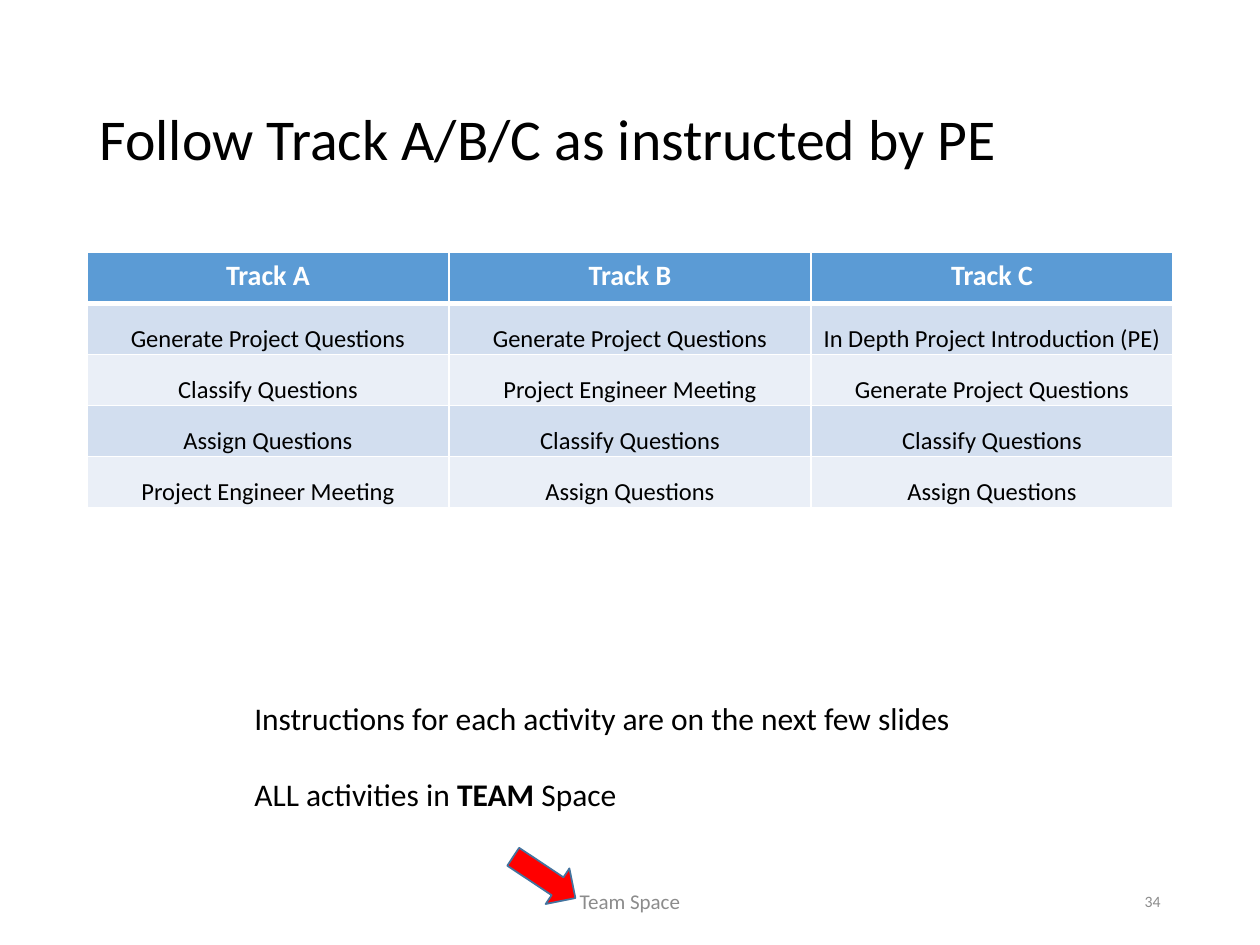
from lxml.etree import SubElement
from pptx import Presentation
from pptx.dml.color import RGBColor
from pptx.enum.shapes import MSO_SHAPE
from pptx.enum.text import MSO_ANCHOR, MSO_AUTO_SIZE, PP_ALIGN
from pptx.oxml.ns import qn
from pptx.util import Inches, Pt

FONT = "Calibri"
BLACK, WHITE, GRAY = "000000", "FFFFFF", "8C8C8C"
HEADER, BANDS = "5B9BD5", ("D2DEEF", "EAEFF7")
MARGIN, CONTENT = 0.069, 0.862  # shares of the slide width

TRACKS = [
    ("Track A", "Track B", "Track C"),
    ("Generate Project Questions", "Generate Project Questions",
     "In Depth Project Introduction (PE)"),
    ("Classify Questions", "Project Engineer Meeting", "Generate Project Questions"),
    ("Assign Questions", "Classify Questions", "Classify Questions"),
    ("Project Engineer Meeting", "Assign Questions", "Assign Questions"),
]


def color(value):
    return RGBColor.from_string(value)


class SlideBuilder:
    """Holds the deck, the current slide and the shared style."""

    def __init__(self, width, height):
        self.deck = Presentation()
        self.deck.slide_width, self.deck.slide_height = Inches(width), Inches(height)
        self.slide = self.deck.slides.add_slide(self.deck.slide_layouts[5])

    def area(self, left, top, width, height):
        """Turn shares of the slide into lengths."""
        across, down = self.deck.slide_width, self.deck.slide_height
        return (round(left * across), round(top * down),
                round(width * across), round(height * down))

    def fill_text(self, frame, paragraphs, size, ink=BLACK, align=PP_ALIGN.LEFT,
                  gap=0, bold=False):
        """Each paragraph is a list of texts; every second text is bold."""
        for index, texts in enumerate(paragraphs):
            para = frame.add_paragraph() if index else frame.paragraphs[0]
            para.alignment = align
            para.space_before = Pt(gap if index else 0)
            for number, text in enumerate(texts):
                span = para.add_run()
                span.text = text
                span.font.name, span.font.size = FONT, Pt(size)
                span.font.bold = bold or number % 2 == 1
                span.font.color.rgb = color(ink)

    def title(self, text, area, size):
        box = self.slide.shapes.title
        box.left, box.top, box.width, box.height = self.area(*area)
        frame = box.text_frame
        frame.auto_size = MSO_AUTO_SIZE.NONE
        frame.vertical_anchor = MSO_ANCHOR.MIDDLE
        self.fill_text(frame, [[text]], size)
        frame.paragraphs[0].line_spacing = 0.9

    def text(self, paragraphs, area, size, anchor=MSO_ANCHOR.TOP, **style):
        frame = self.slide.shapes.add_textbox(*self.area(*area)).text_frame
        frame.word_wrap = True
        frame.vertical_anchor = anchor
        self.fill_text(frame, paragraphs, size, **style)

    def borders(self, cell, bottom):
        properties = cell._tc.get_or_add_tcPr()
        for side, points in (("L", 1), ("R", 1), ("T", 1), ("B", bottom)):
            line = SubElement(properties, qn(f"a:ln{side}"), w=str(Pt(points)))
            fill = SubElement(line, qn("a:solidFill"))
            SubElement(fill, qn("a:srgbClr"), val=WHITE)

    def table(self, rows, area):
        table = self.slide.shapes.add_table(
            len(rows), len(rows[0]), *self.area(*area)).table
        for r, texts in enumerate(rows):
            for c, text in enumerate(texts):
                cell, header = table.cell(r, c), r == 0
                self.borders(cell, 3 if header else 1)
                cell.fill.solid()
                cell.fill.fore_color.rgb = color(HEADER if header else BANDS[(r - 1) % 2])
                if not header:
                    cell.vertical_anchor = MSO_ANCHOR.BOTTOM
                    cell.margin_left = cell.margin_right = cell.margin_top = Inches(0.01)
                    cell.margin_bottom = 0
                self.fill_text(cell.text_frame, [[text]], 16 if header else 14,
                               WHITE if header else BLACK, PP_ALIGN.CENTER, bold=header)

    def arrow(self, area, rotation, fill, outline):
        shape = self.slide.shapes.add_shape(MSO_SHAPE.DOWN_ARROW, *self.area(*area))
        shape.shadow.inherit = False
        shape.rotation = rotation
        shape.fill.solid()
        shape.fill.fore_color.rgb = color(fill)
        shape.line.color.rgb = color(outline)
        shape.line.width = Pt(1)


def main():
    builder = SlideBuilder(10, 7.5)

    # Title and track table
    builder.title("Follow Track A/B/C as instructed by PE",
                  (MARGIN, 0.053, CONTENT, 0.193), 33)
    builder.table(TRACKS, (MARGIN, 0.267, CONTENT, 0.27))

    # Footer and slide number
    builder.text([["Team Space"]], (0.331, 0.927, 0.338, 0.053), 12,
                 MSO_ANCHOR.MIDDLE, ink=GRAY, align=PP_ALIGN.CENTER)
    builder.text([["34"]], (0.706, 0.927, 0.225, 0.053), 9,
                 MSO_ANCHOR.MIDDLE, ink=GRAY, align=PP_ALIGN.RIGHT)

    # Instructions, with an arrow to the footer
    builder.text([["Instructions for each activity are on the next few slides"],
                  ["ALL activities in ", "TEAM", " Space"]],
                 (0.192, 0.733, 0.591, 0.135), 18, gap=22)
    builder.arrow((0.415, 0.889, 0.034, 0.079), 303.6, "FF0000", "43739E")

    builder.deck.save("out.pptx")


if __name__ == "__main__":
    main()
